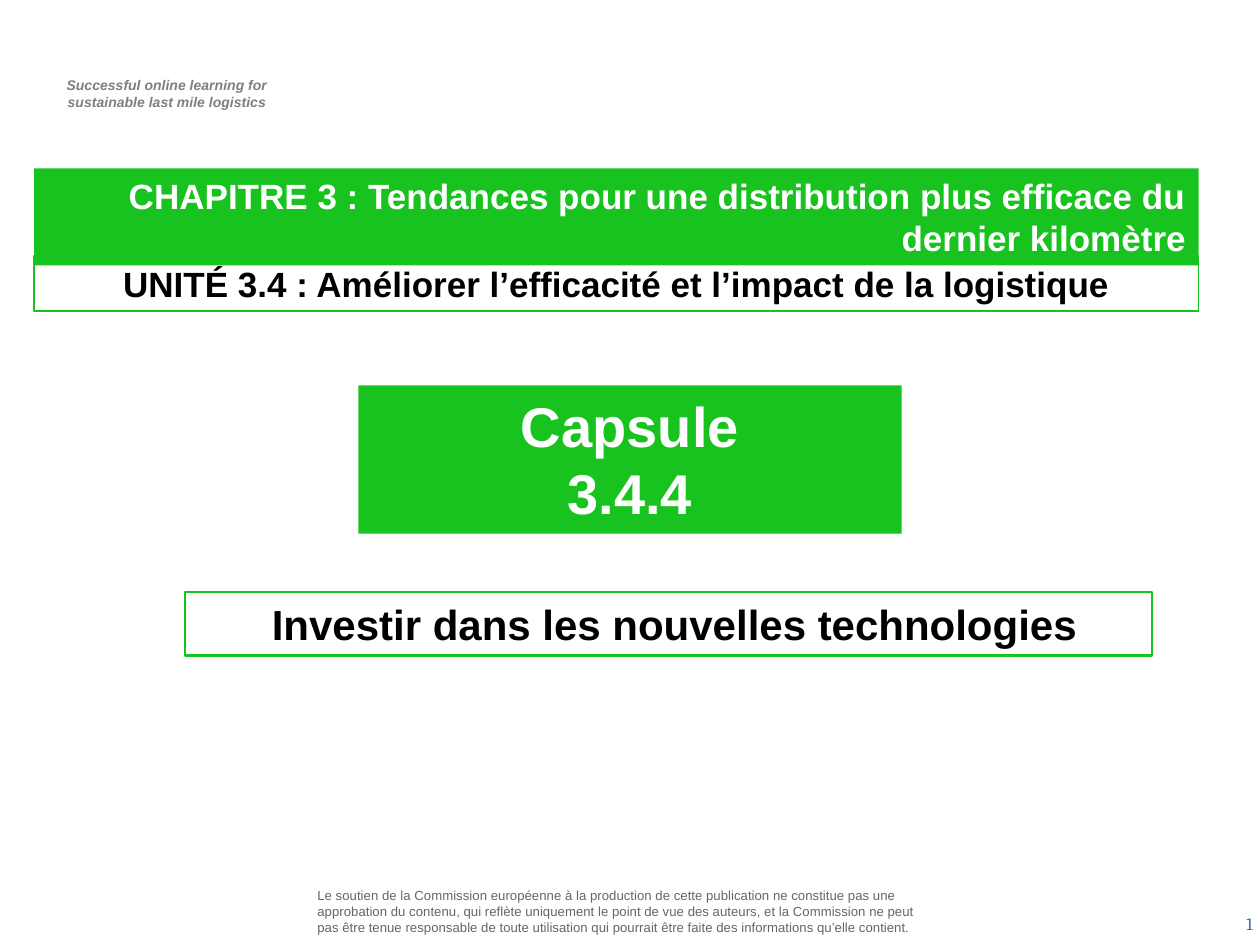
from pptx import Presentation
from pptx.dml.color import RGBColor
from pptx.enum.shapes import MSO_SHAPE
from pptx.enum.text import MSO_ANCHOR, MSO_AUTO_SIZE, PP_ALIGN
from pptx.util import Pt

COLORS = {"green": "18C320", "white": "FFFFFF", "black": "000000",
          "gray": "7F7F7F", "dark_gray": "666666", "blue": "3366CC"}
HEADING = {"name": "Arial", "bold": True}


def rgb(name):
    return RGBColor.from_string(COLORS[name])


def write(sp, lines, color, size, font, align, anchor=MSO_ANCHOR.TOP,
          insets=(7.2, 3.6, 7.2, 3.6)):
    tf = sp.text_frame
    tf.word_wrap = True
    tf.auto_size = MSO_AUTO_SIZE.NONE
    tf.vertical_anchor = anchor
    for side, inset in zip(("left", "top", "right", "bottom"), insets):
        setattr(tf, f"margin_{side}", Pt(inset))
    tf.text = "\n".join(lines)
    for p in tf.paragraphs:
        p.alignment = align
        for r in p.runs:
            r.font.size = Pt(size)
            r.font.color.rgb = rgb(color)
            for key, value in font.items():
                setattr(r.font, key, value)


prs = Presentation()
prs.slide_width, prs.slide_height = Pt(720), Pt(540)
s = prs.slides.add_slide(prs.slide_layouts[5])

chapter = s.shapes.title
chapter.left, chapter.top, chapter.width, chapter.height = (
    Pt(v) for v in (19.5, 96.25, 665.5, 55.5))
chapter.fill.solid()
chapter.fill.fore_color.rgb = rgb("green")
write(chapter, ["CHAPITRE 3 : Tendances pour une distribution plus efficace du dernier kilomètre"],
      "white", 20, HEADING, PP_ALIGN.RIGHT)

boxes = [
    ((19.5, 146.25, 665.5, 31.5), None, 0.75, 20, 7.2,
     ["UNITÉ 3.4 : Améliorer l’efficacité et l’impact de la logistique"]),
    ((204.75, 220.25, 310.5, 84.75), "green", 0, 32, 7.2, ["Capsule", "3.4.4"]),
    ((105.75, 338.25, 552.5, 36.25), None, 1.5, 24, 13.9,
     ["Investir dans les nouvelles technologies"]),
]
for place, fill, line, size, left, lines in boxes:
    sp = s.shapes.add_shape(MSO_SHAPE.RECTANGLE, *(Pt(v) for v in place))
    sp.shadow.inherit = False
    if fill:
        sp.fill.solid()
        sp.fill.fore_color.rgb = rgb(fill)
        sp.line.fill.background()
    else:
        sp.fill.background()
        sp.line.color.rgb = rgb("green")
        sp.line.width = Pt(line)
    write(sp, lines, "white" if fill else "black", size, HEADING, PP_ALIGN.CENTER,
          insets=(left, 3.6, 7.2, 3.6))

notes = [
    ((20.9, 40.3, 146.2, 26.6),
     ["Successful online learning for", "sustainable last mile logistics"],
     "gray", 8, {**HEADING, "italic": True}, PP_ALIGN.CENTER, MSO_ANCHOR.TOP,
     (10, 3.6, 7.2, 3.6)),
    ((178.5, 506.2, 355, 28.8),
     ["Le soutien de la Commission européenne à la production de cette publication "
      "ne constitue pas une approbation du contenu, qui reflète uniquement le point "
      "de vue des auteurs, et la Commission ne peut pas être tenue responsable de "
      "toute utilisation qui pourrait être faite des informations qu’elle contient."],
     "dark_gray", 7.5, {"name": "Arial"}, PP_ALIGN.LEFT, MSO_ANCHOR.MIDDLE,
     (2.9, 2.9, 2.9, 2.9)),
    ((555.1, 513.4, 167.8, 28.8), ["1"],
     "blue", 10, {"name": "Cambria"}, PP_ALIGN.RIGHT, MSO_ANCHOR.MIDDLE,
     (7.2, 3.6, 7.2, 3.6)),
]
for place, *text in notes:
    write(s.shapes.add_textbox(*(Pt(v) for v in place)), *text)

prs.save("out.pptx")
